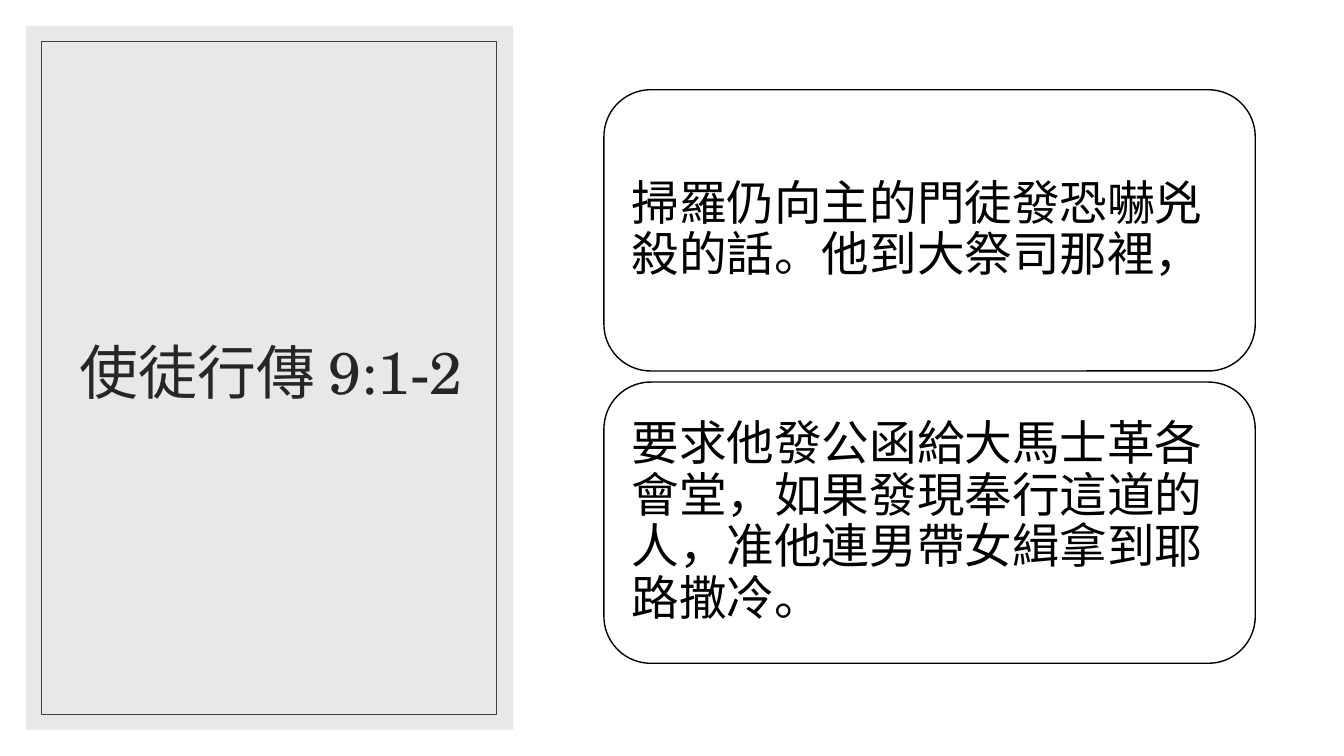
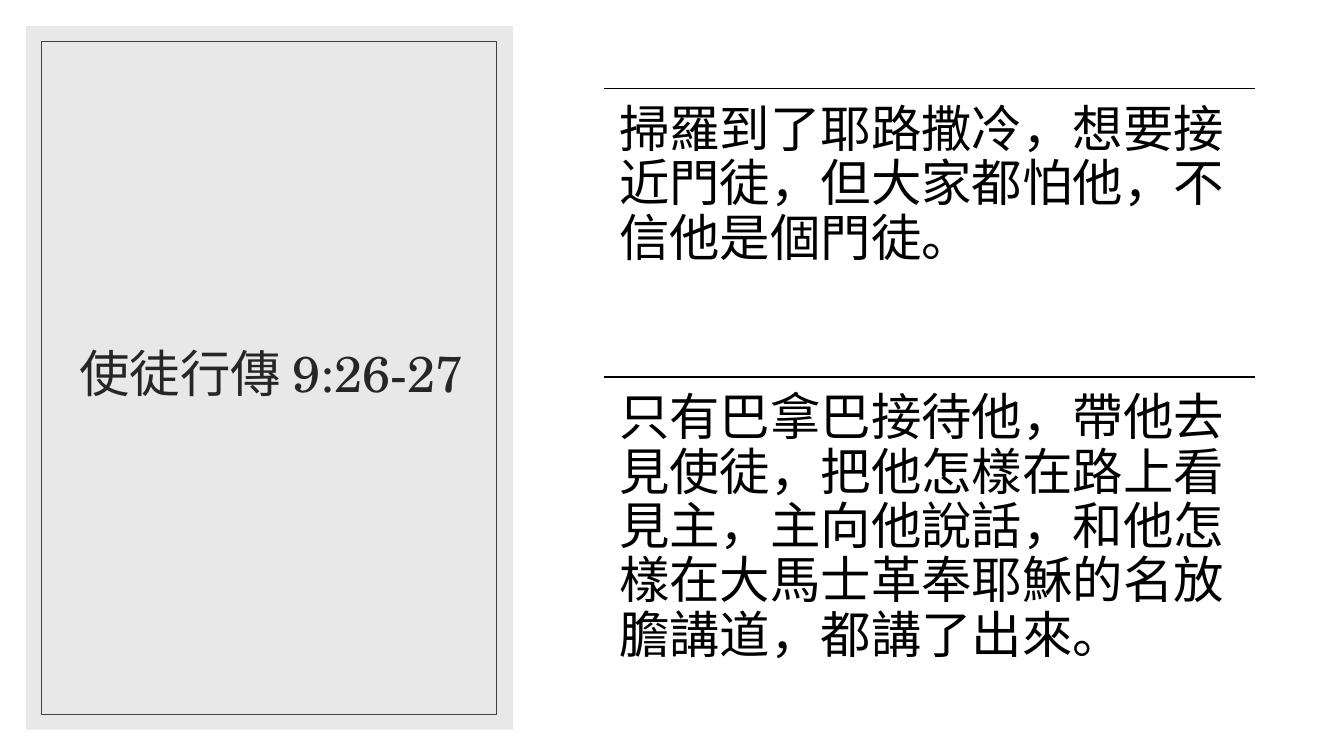
from dataclasses import dataclass

from lxml import etree
from pptx import Presentation
from pptx.dml.color import RGBColor
from pptx.enum import shapes, text
from pptx.oxml import ns
from pptx.util import Inches, Pt

READINGS = [
    {
        "title": "使徒行傳 9:1-2",
        "title_size": 42,
        "style": "cards",
        "verses": [
            "掃羅仍向主的門徒發恐嚇兇殺的話。他到大祭司那裡，",
            "要求他發公函給大馬士革各會堂，如果發現奉行這道的人，准他連男帶女緝拿到耶路撒冷。",
        ],
    },
    {
        "title": "使徒行傳 9:26-27",
        "title_size": 36,
        "style": "ruled",
        "verses": [
            "掃羅到了耶路撒冷，想要接近門徒，但大家都怕他，不信他是個門徒。",
            "只有巴拿巴接待他，帶他去見使徒，把他怎樣在路上看見主，主向他說話，"
            "和他怎樣在大馬士革奉耶穌的名放膽講道，都講了出來。",
        ],
    },
]


@dataclass(frozen=True)
class Theme:
    title_font: str = "TeX Gyre Schola"
    body_font: str = "Roboto"
    card_size: int = 34
    ruled_size: int = 36
    line_spacing: float = 0.9
    white: RGBColor = RGBColor.from_string("FFFFFF")
    black: RGBColor = RGBColor.from_string("000000")
    title_ink: RGBColor = RGBColor.from_string("262626")
    frame_ink: RGBColor = RGBColor.from_string("404040")
    panel: RGBColor = RGBColor.from_string("D9D9D9")
    panel_opacity: int = 60


THEME = Theme()
PANEL = (0.26, 0.26, 4.83, 6.98)
FRAME = (0.41, 0.41, 4.51, 6.68)
TITLE = (0.63, 0.61, 4.12, 6.24)
VERSE_LEFT, VERSE_WIDTH = 5.99, 6.46
CARD_TOP, CARD_HEIGHT, CARD_GAP = 0.89, 2.79, 0.11
RULE_TOP, RULE_PITCH = 0.88, 2.86


def add_box(page, preset, area, fill=None, line=None, weight=1):
    box = page.shapes.add_shape(preset, *map(Inches, area))
    box.shadow.inherit = False
    if fill is None:
        box.fill.background()
    else:
        box.fill.solid()
        box.fill.fore_color.rgb = fill
    if line is None:
        box.line.fill.background()
    else:
        box.line.color.rgb = line
        box.line.width = Pt(weight)
    return box


def write(box, words, font, size, color, align, anchor, inset=None):
    frame = box.text_frame
    frame.word_wrap = True
    frame.vertical_anchor = anchor
    if inset is not None:
        frame.margin_left = frame.margin_right = Inches(inset)
        frame.margin_top = frame.margin_bottom = Inches(inset)
    para = frame.paragraphs[0]
    para.alignment = align
    para.line_spacing = THEME.line_spacing
    span = para.add_run()
    span.text = words
    span.font.name = font
    span.font.size = Pt(size)
    span.font.color.rgb = color


def add_title_panel(page, title, size):
    rectangle = shapes.MSO_SHAPE.RECTANGLE
    panel = add_box(page, rectangle, PANEL, fill=THEME.panel)
    color = panel.fill._xPr.find(ns.qn("a:solidFill"))[0]
    etree.SubElement(color, ns.qn("a:alpha"), val=str(THEME.panel_opacity * 1000))
    box = page.shapes.add_textbox(*map(Inches, TITLE))
    write(box, title, THEME.title_font, size, THEME.title_ink,
          text.PP_ALIGN.CENTER, text.MSO_ANCHOR.MIDDLE)
    add_box(page, rectangle, FRAME, line=THEME.frame_ink, weight=0.5)


def add_cards(page, verses):
    for index, verse in enumerate(verses):
        top = CARD_TOP + index * (CARD_HEIGHT + CARD_GAP)
        card = add_box(page, shapes.MSO_SHAPE.ROUNDED_RECTANGLE,
                       (VERSE_LEFT, top, VERSE_WIDTH, CARD_HEIGHT),
                       fill=THEME.white, line=THEME.black)
        write(card, verse, THEME.body_font, THEME.card_size, THEME.black,
              text.PP_ALIGN.LEFT, text.MSO_ANCHOR.MIDDLE, inset=0.14)


def add_ruled(page, verses):
    for index, verse in enumerate(verses):
        top = RULE_TOP + index * RULE_PITCH
        ends = (VERSE_LEFT, top, VERSE_LEFT + VERSE_WIDTH, top)
        rule = page.shapes.add_connector(shapes.MSO_CONNECTOR.STRAIGHT, *map(Inches, ends))
        rule.line.color.rgb = THEME.black
        rule.line.width = Pt(1)
        etree.SubElement(rule._element.spPr, ns.qn("a:effectLst"))
        area = (VERSE_LEFT, top, VERSE_WIDTH, RULE_PITCH)
        box = page.shapes.add_textbox(*map(Inches, area))
        write(box, verse, THEME.body_font, THEME.ruled_size, THEME.black,
              text.PP_ALIGN.LEFT, text.MSO_ANCHOR.TOP, inset=0.15)


VERSE_STYLES = {"cards": add_cards, "ruled": add_ruled}


def main():
    deck = Presentation()
    deck.slide_width, deck.slide_height = Inches(13.33), Inches(7.5)
    blank = deck.slide_layouts[6]
    for reading in READINGS:
        page = deck.slides.add_slide(blank)
        add_title_panel(page, reading["title"], reading["title_size"])
        VERSE_STYLES[reading["style"]](page, reading["verses"])
    deck.save("out.pptx")


if __name__ == "__main__":
    main()
